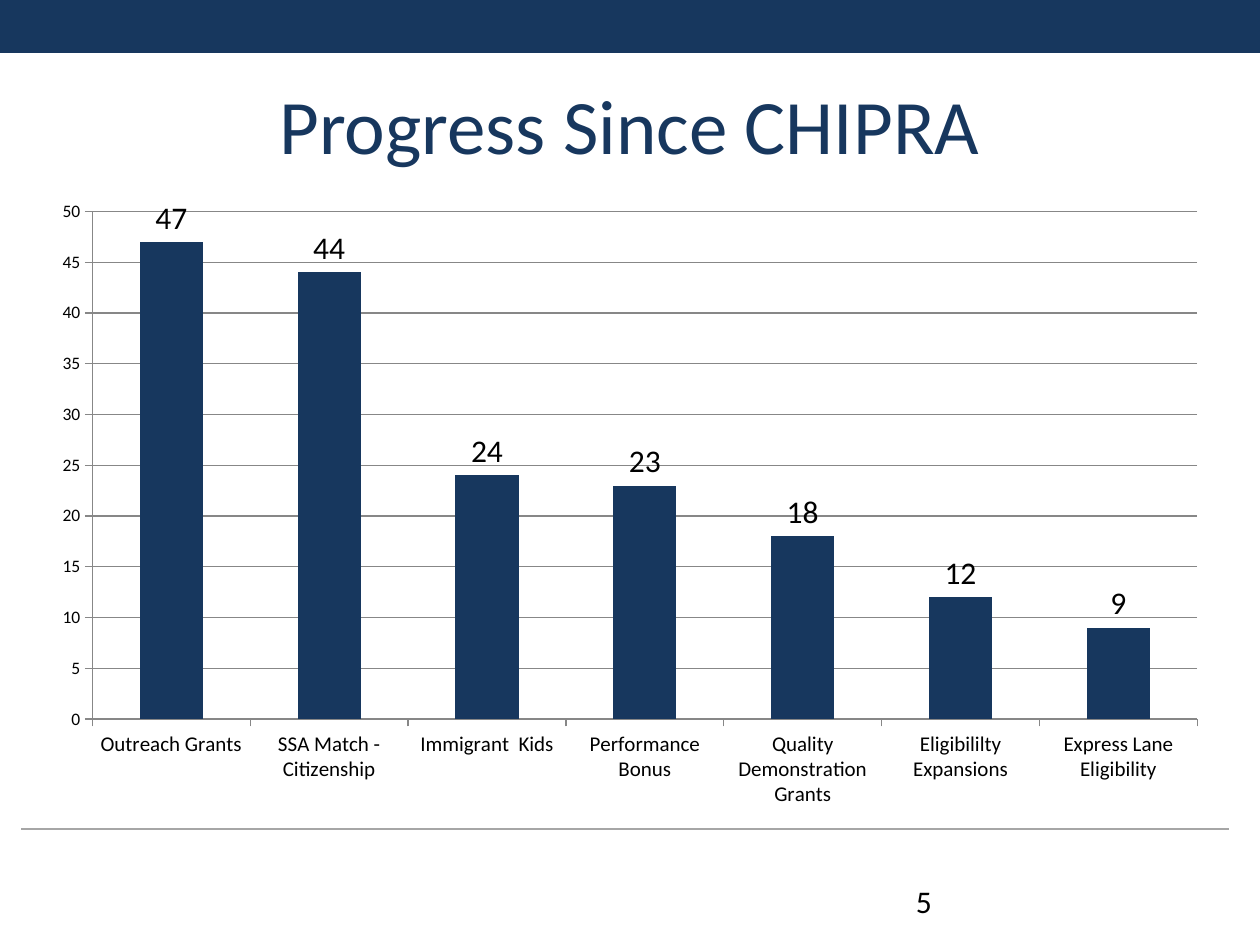
from pptx import Presentation
from pptx.chart.data import CategoryChartData
from pptx.dml.color import RGBColor
from pptx.enum.chart import XL_CHART_TYPE as ChartType, XL_LABEL_POSITION as LabelPosition
from pptx.enum.chart import XL_TICK_MARK as TickMark
from pptx.enum.shapes import MSO_CONNECTOR as Connector, MSO_SHAPE as Shape
from pptx.enum.text import MSO_ANCHOR as Anchor, PP_ALIGN as Align
from pptx.oxml import parse_xml
from pptx.oxml.ns import nsdecls
from pptx.util import Inches, Pt

# Content
TITLE = "Progress Since CHIPRA"
PAGE_NUMBER = "5"
PROGRESS = [
    ("Outreach Grants", 47),
    ("SSA Match - Citizenship", 44),
    ("Immigrant  Kids", 24),
    ("Performance Bonus", 23),
    ("Quality Demonstration Grants", 18),
    ("Eligibililty Expansions", 12),
    ("Express Lane Eligibility", 9),
]

# Style and layout
FONT = "Calibri"
NAVY, BLACK, RULE_GRAY, AXIS_GRAY = "17375E", "000000", "A6A6A6", "878787"
WIDTH, HEIGHT = 10, 7.5
BAND_HEIGHT = 0.42
MARGIN = 0.5
CHART_WIDTH = 9.38


def color(hex_string):
    return RGBColor.from_string(hex_string)


def box(left, top, width, height):
    return [Inches(length) for length in (left, top, width, height)]


def set_font(font, size, hex_string=BLACK):
    font.name, font.size = FONT, Pt(size)
    font.color.rgb = color(hex_string)


def set_line(line, hex_string):
    line.color.rgb = color(hex_string)
    line.width = Pt(0.75)


def add_text(slide, text, place, size, hex_string, align, anchor):
    frame = slide.shapes.add_textbox(*box(*place)).text_frame
    frame.word_wrap = True
    frame.vertical_anchor = anchor
    paragraph = frame.paragraphs[0]
    paragraph.text = text
    paragraph.alignment = align
    set_font(paragraph.font, size, hex_string)


def add_progress_chart(slide):
    data = CategoryChartData()
    data.categories = [name for name, _ in PROGRESS]
    data.add_series("Series 1", [value for _, value in PROGRESS])
    place = box((WIDTH - CHART_WIDTH) / 2, 1.5, CHART_WIDTH, 5)
    chart = slide.shapes.add_chart(ChartType.COLUMN_CLUSTERED, *place, data).chart
    chart.has_legend = chart.has_title = False
    set_font(chart.font, 10)

    # Axes
    value_axis, category_axis = chart.value_axis, chart.category_axis
    value_axis.minimum_scale, value_axis.maximum_scale = 0, 50
    value_axis.major_unit = 5
    value_axis.has_major_gridlines = True
    set_line(value_axis.major_gridlines.format.line, AXIS_GRAY)
    for axis, size in ((value_axis, 10), (category_axis, 12)):
        axis.major_tick_mark = TickMark.OUTSIDE
        set_line(axis.format.line, AXIS_GRAY)
        set_font(axis.tick_labels.font, size)

    # Columns and their values
    plot = chart.plots[0]
    plot.gap_width = 150
    plot.vary_by_categories = False
    series = plot.series[0]
    series.format.fill.solid()
    series.format.fill.fore_color.rgb = color(NAVY)
    labels = series.data_labels
    labels.show_value = True
    labels.position = LabelPosition.OUTSIDE_END
    set_font(labels.font, 18)


presentation = Presentation()
presentation.slide_width, presentation.slide_height = Inches(WIDTH), Inches(HEIGHT)
slide = presentation.slides.add_slide(presentation.slide_layouts[6])

# Top band
band = slide.shapes.add_shape(Shape.RECTANGLE, *box(0, 0, WIDTH, BAND_HEIGHT))
band.shadow.inherit = False
band.fill.solid()
band.fill.fore_color.rgb = color(NAVY)
band.line.fill.background()

# Footer rule
rule = slide.shapes.add_connector(Connector.STRAIGHT, *box(0.17, 6.58, 9.75, 6.58))
set_line(rule.line, RULE_GRAY)
rule._element.spPr.append(parse_xml(f"<a:effectLst {nsdecls('a')}/>"))

# Title, page number and chart
add_text(slide, TITLE, (MARGIN, BAND_HEIGHT, WIDTH - 2 * MARGIN, 1.13),
         44, NAVY, Align.CENTER, Anchor.MIDDLE)
add_text(slide, PAGE_NUMBER, (7.17, 6.95, 2.33, 0.4), 18, BLACK, Align.LEFT, Anchor.TOP)
add_progress_chart(slide)

presentation.save("out.pptx")
